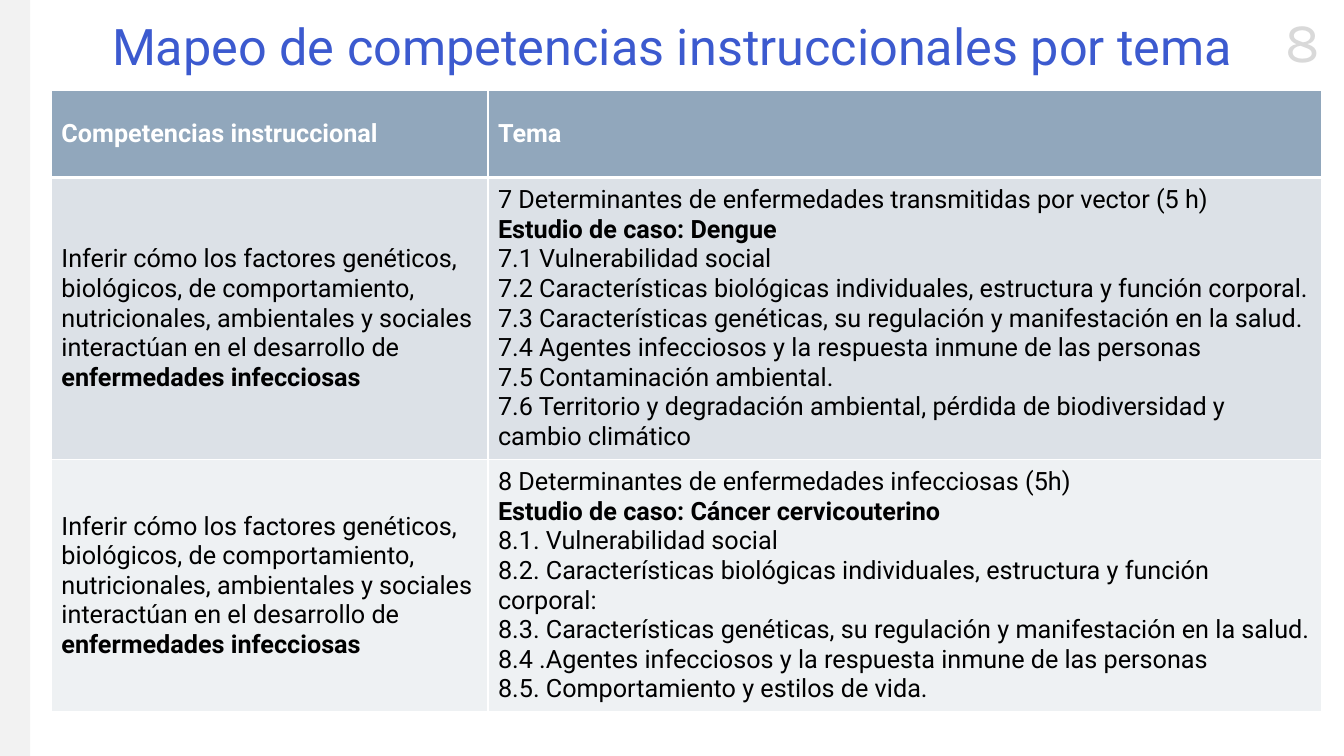
import pptx
import pptx.util
import pptx.dml.color
import pptx.enum.shapes
import pptx.enum.text
import pptx.oxml
import pptx.oxml.ns
from dataclasses import dataclass

PX = 9144  # 100 px to the inch


@dataclass(frozen=True)
class Theme:
    font: str = "Roboto"
    num_font: str = "Karla"
    title: str = "3C5ACF"
    side: str = "F2F2F2"
    num: str = "D9D9D9"
    text: str = "000000"
    head: str = "FFFFFF"
    line: str = "FFFFFF"
    fills: tuple = ("91A7BC", "DCE1E7", "EEF1F3")
    title_size: int = 36
    num_size: int = 40
    body_size: int = 18


THEME = Theme()
ANCHOR = pptx.enum.text.MSO_ANCHOR
CENTER = pptx.enum.text.PP_ALIGN.CENTER

# Text between asterisks is bold.
SKILL = ("Inferir cómo los factores genéticos, biológicos, de comportamiento, "
         "nutricionales, ambientales y sociales interactúan en el desarrollo de "
         "*enfermedades infecciosas*")
ROWS = [
    (["*Competencias instruccional*"], ["*Tema*"]),
    ([SKILL], [
        "7 Determinantes de enfermedades transmitidas por vector (5 h)",
        "*Estudio de caso: Dengue*",
        "7.1 Vulnerabilidad social",
        "7.2 Características biológicas individuales, estructura y función corporal.",
        "7.3 Características genéticas, su regulación y manifestación en la salud.",
        "7.4 Agentes infecciosos y la respuesta inmune de las personas",
        "7.5 Contaminación ambiental.",
        "7.6 Territorio y degradación ambiental, pérdida de biodiversidad y cambio climático",
    ]),
    ([SKILL], [
        "8 Determinantes de enfermedades infecciosas (5h)",
        "*Estudio de caso: Cáncer cervicouterino*",
        "8.1. Vulnerabilidad social",
        "8.2. Características biológicas individuales, estructura y función corporal:",
        "8.3. Características genéticas, su regulación y manifestación en la salud.",
        "8.4 .Agentes infecciosos y la respuesta inmune de las personas",
        "8.5. Comportamiento y estilos de vida.",
    ]),
]


def color(code):
    return pptx.dml.color.RGBColor.from_string(code)


def scale(box):
    return [side * PX for side in box]


def style(font, name, size, code, bold=False):
    font.name, font.size, font.bold = name, pptx.util.Pt(size), bold
    font.color.rgb = color(code)


def add_side(slide, box):
    bar = slide.shapes.add_shape(
        pptx.enum.shapes.MSO_SHAPE.RECTANGLE, *scale(box))
    bar.shadow.inherit = False
    bar.fill.solid()
    bar.fill.fore_color.rgb = color(THEME.side)
    bar.line.fill.background()


def add_number(slide, box, text):
    frame = slide.shapes.add_textbox(*scale(box)).text_frame
    frame.word_wrap = False
    frame.text = text
    para = frame.paragraphs[0]
    para.alignment = CENTER
    style(para.runs[0].font, THEME.num_font, THEME.num_size, THEME.num)


def set_title(slide, box, text):
    title = slide.shapes.title
    title.left, title.top, title.width, title.height = scale(box)
    frame = title.text_frame
    frame.text = text
    frame.auto_size = pptx.enum.text.MSO_AUTO_SIZE.NONE
    frame.vertical_anchor = ANCHOR.MIDDLE
    para = frame.paragraphs[0]
    para.alignment, para.line_spacing = CENTER, 0.9
    style(para.runs[0].font, THEME.font, THEME.title_size, THEME.title)


def set_edges(cell, widths):
    """Widths are in points, in the order left, right, top, bottom."""
    props = cell._tc.get_or_add_tcPr()
    for i, (side, width) in enumerate(zip("LRTB", widths)):
        props.insert(i, pptx.oxml.parse_xml(
            f'<a:ln{side} {pptx.oxml.ns.nsdecls("a")} w="{pptx.util.Pt(width)}">'
            f'<a:solidFill><a:srgbClr val="{THEME.line}"/></a:solidFill>'
            f'</a:ln{side}>'))


def fill_cell(cell, lines, fill, ink):
    cell.fill.solid()
    cell.fill.fore_color.rgb = color(fill)
    cell.vertical_anchor = ANCHOR.MIDDLE
    frame = cell.text_frame
    for i, line in enumerate(lines):
        para = frame.add_paragraph() if i else frame.paragraphs[0]
        for j, part in enumerate(line.split("*")):
            if part:
                run = para.add_run()
                run.text = part
                style(run.font, THEME.font, THEME.body_size, ink, j % 2 == 1)


def add_map(slide, box, split, heights):
    """The first column is split px wide; the second takes the rest."""
    table = slide.shapes.add_table(len(ROWS), 2, *scale(box)).table
    for col, width in zip(table.columns, (split, box[2] - split)):
        col.width = width * PX
    for r, (row, height) in enumerate(zip(ROWS, heights)):
        table.rows[r].height = height * PX
        ink = THEME.text if r else THEME.head
        for c, lines in enumerate(row):
            cell = table.cell(r, c)
            fill_cell(cell, lines, THEME.fills[r], ink)
            set_edges(cell, (1, 1, 3 if r == 1 else 1, 1 if r else 3))


def main():
    deck = pptx.Presentation()
    deck.slide_width, deck.slide_height = scale((1333, 750))
    slide = deck.slides.add_slide(deck.slide_layouts.get_by_name("Title Only"))
    add_side(slide, (0, 0, 30, 750))
    add_number(slide, (1254, 2, 75, 77), "8")
    set_title(slide, (92, 7, 1150, 84), "Mapeo de competencias instruccionales por tema")
    heights = (86, 272, 244)
    add_map(slide, (51, 90, 1260, sum(heights)), 433, heights)
    deck.save("out.pptx")


if __name__ == "__main__":
    main()
